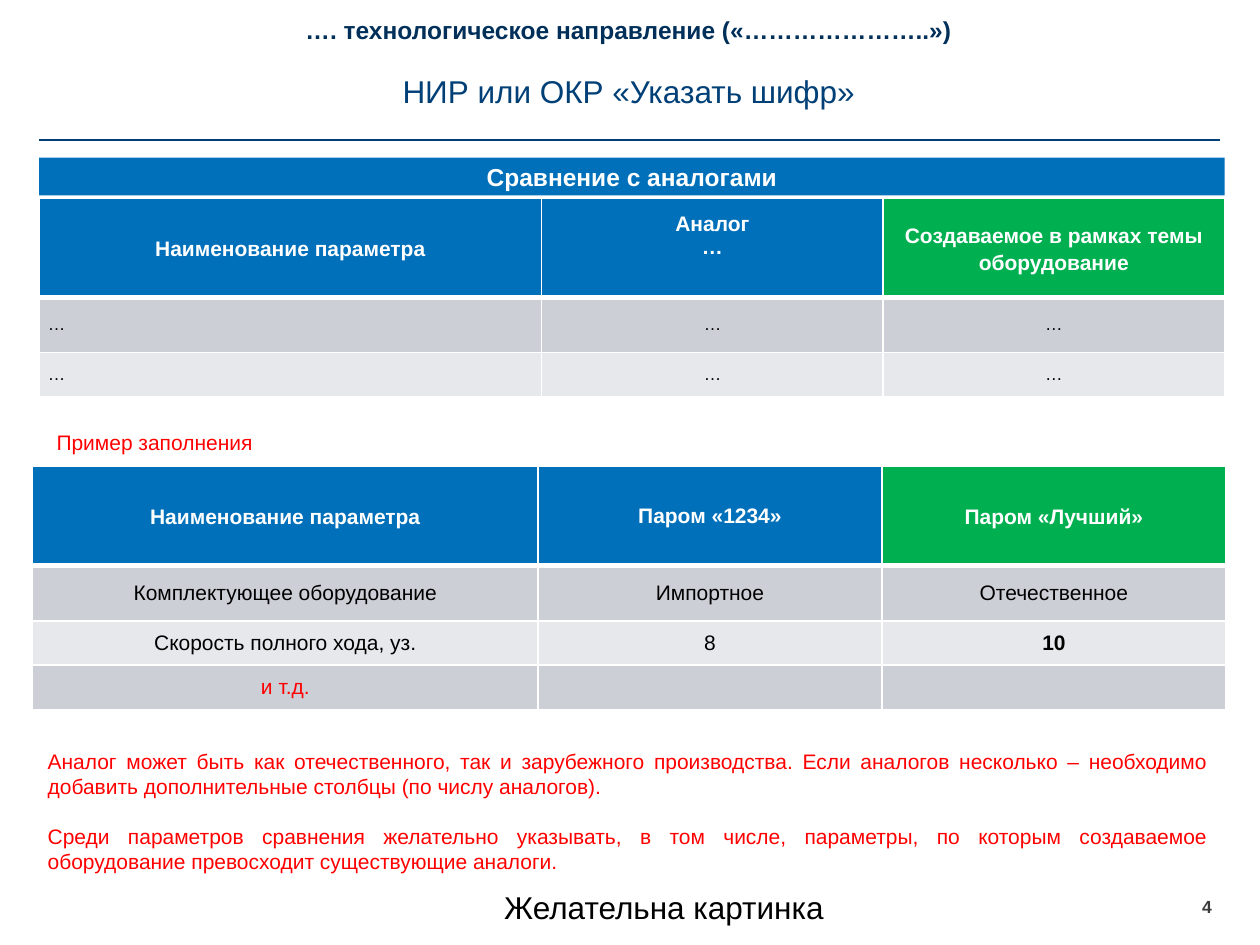
from lxml import etree
from pptx import Presentation
from pptx.dml.color import RGBColor
from pptx.enum.shapes import MSO_CONNECTOR, MSO_SHAPE
from pptx.enum.text import MSO_ANCHOR, PP_ALIGN
from pptx.oxml import parse_xml
from pptx.oxml.ns import nsdecls, qn
from pptx.util import Inches, Pt

COLORS = {name: RGBColor.from_string(value) for name, value in {
    "navy": "004077", "dark navy": "003059", "blue": "0070BA", "green": "00B050",
    "dark band": "CCCFD6", "light band": "E7E8EC", "red": "FF0000",
    "black": "000000", "white": "FFFFFF", "gray": "3C3C3C",
}.items()}
CENTER, JUSTIFY, LEFT = PP_ALIGN.CENTER, PP_ALIGN.JUSTIFY, PP_ALIGN.LEFT

presentation = Presentation()
presentation.slide_width, presentation.slide_height = Inches(10), Inches(7.5)
slide = presentation.slides.add_slide(presentation.slide_layouts[6])


def place(*percents):
    """Turn alternating percents of slide width and height into lengths."""
    sides = (presentation.slide_width, presentation.slide_height)
    return [round(percent / 100 * sides[i % 2]) for i, percent in enumerate(percents)]


def write(frame, text, size, color, bold=False, align=CENTER, gap=0):
    frame.text = text
    for number, paragraph in enumerate(frame.paragraphs):
        paragraph.alignment = align
        if number and gap:
            paragraph.space_before = Pt(gap)
        font = paragraph.font
        font.name, font.size, font.bold = "Arial", Pt(size), bold
        font.color.rgb = COLORS[color]


# Rule under the heading
left, top, right = place(3.1, 14.8, 96.8)
rule = slide.shapes.add_connector(MSO_CONNECTOR.STRAIGHT, left, top, right, top)
rule.line.color.rgb = COLORS["navy"]
rule.line.width = Pt(1)
etree.SubElement(rule.element.spPr, qn("a:effectLst"))

# Section bar
bar = slide.shapes.add_shape(MSO_SHAPE.RECTANGLE, *place(3.1, 16.67, 94.1, 4))
bar.shadow.inherit = False
bar.fill.solid()
bar.fill.fore_color.rgb = COLORS["blue"]
bar.line.fill.background()
bar.text_frame.vertical_anchor = MSO_ANCHOR.MIDDLE
write(bar.text_frame, "Сравнение с аналогами", 14, "white", True)

# Text boxes: place, text, size, color, bold, alignment, paragraph gap, inset
notes = (
    "Аналог может быть как отечественного, так и зарубежного производства. "
    "Если аналогов несколько – необходимо добавить дополнительные столбцы "
    "(по числу аналогов).\n"
    "Среди параметров сравнения желательно указывать, в том числе, параметры, "
    "по которым создаваемое оборудование превосходит существующие аналоги."
)
text_boxes = [
    ((3.1, 1.6, 93.6, 3.87), "…. технологическое направление («…………………..»)",
     14, "dark navy", True, CENTER, 0, False),
    ((3, 6.93, 93.8, 5.33), "НИР или ОКР «Указать шифр»",
     18, "navy", False, CENTER, 0, True),
    ((3.5, 44.8, 94.1, 4), "Пример заполнения", 12, "red", False, JUSTIFY, 0, True),
    ((2.8, 78.53, 94.1, 14.8), notes, 12, "red", False, JUSTIFY, 14, True),
    ((27.7, 93.33, 50, 5.33), "Желательна картинка",
     18, "black", False, CENTER, 0, True),
    ((95.4, 94.8, 2.4, 2.4), "4", 10, "gray", True, LEFT, 0, False),
]
for position, text, size, color, bold, align, gap, inset in text_boxes:
    frame = slide.shapes.add_textbox(*place(*position)).text_frame
    frame.word_wrap = True
    if not inset:
        frame.margin_left = frame.margin_right = 0
        frame.margin_top = frame.margin_bottom = 0
    write(frame, text, size, color, bold, align, gap)

# Tables: left, top, column widths, body size, first column alignment, rows
tables = [
    (3.1, 20.93, (39.9, 27.1, 27.1), 10, JUSTIFY, [
        ("Наименование параметра", "Аналог\n…",
         "Создаваемое в рамках темы оборудование"),
        ("…", "…", "…"),
        ("…", "…", "…"),
    ]),
    (2.6, 49.33, (40.1, 27.3, 27.3), 12, CENTER, [
        ("Наименование параметра", "Паром «1234»", "Паром «Лучший»"),
        ("Комплектующее оборудование", "Импортное", "Отечественное"),
        ("Скорость полного хода, уз.", "8", "10"),
        ("и т.д.", "", ""),
    ]),
]
row_heights = (10.53, 5.87, 4.67, 4.67)
header_fills = ("blue", "blue", "green")
for left, top, widths, body_size, first_align, rows in tables:
    heights = row_heights[:len(rows)]
    table = slide.shapes.add_table(
        len(rows), len(widths), *place(left, top, sum(widths), sum(heights))).table
    table.first_row = table.horz_banding = False
    for column, width in zip(table.columns, widths):
        column.width = place(width)[0]
    for r, (texts, height) in enumerate(zip(rows, heights)):
        table.rows[r].height = place(0, height)[1]
        for c, text in enumerate(texts):
            cell = table.cell(r, c)
            cell.vertical_anchor = MSO_ANCHOR.MIDDLE
            cell.margin_left = cell.margin_right = Inches(0.07)
            cell.margin_top = cell.margin_bottom = 0

            # White grid, thicker under the header
            thick = {0: "lnB", 1: "lnT"}.get(r)
            for side in ("lnL", "lnR", "lnT", "lnB"):
                width = Pt(3 if side == thick else 1)
                cell._tc.get_or_add_tcPr().append(parse_xml(
                    f'<a:{side} {nsdecls("a")} w="{width}"><a:solidFill>'
                    f'<a:srgbClr val="{COLORS["white"]}"/></a:solidFill></a:{side}>'))

            band = "dark band" if r % 2 else "light band"
            cell.fill.solid()
            cell.fill.fore_color.rgb = COLORS[header_fills[c] if r == 0 else band]

            if r == 0:
                write(cell.text_frame, text, 12, "white", True)
                if c != 1:
                    cell.text_frame.paragraphs[0].line_spacing = 1.15
                    cell.text_frame.paragraphs[0].space_after = Pt(10)
                elif "\n" in text:
                    cell.margin_bottom = Inches(0.19)  # lifts the two lines
            else:
                write(cell.text_frame, text, body_size,
                      "red" if text == "и т.д." else "black", text == "10",
                      first_align if c == 0 else CENTER)

presentation.save("out.pptx")
